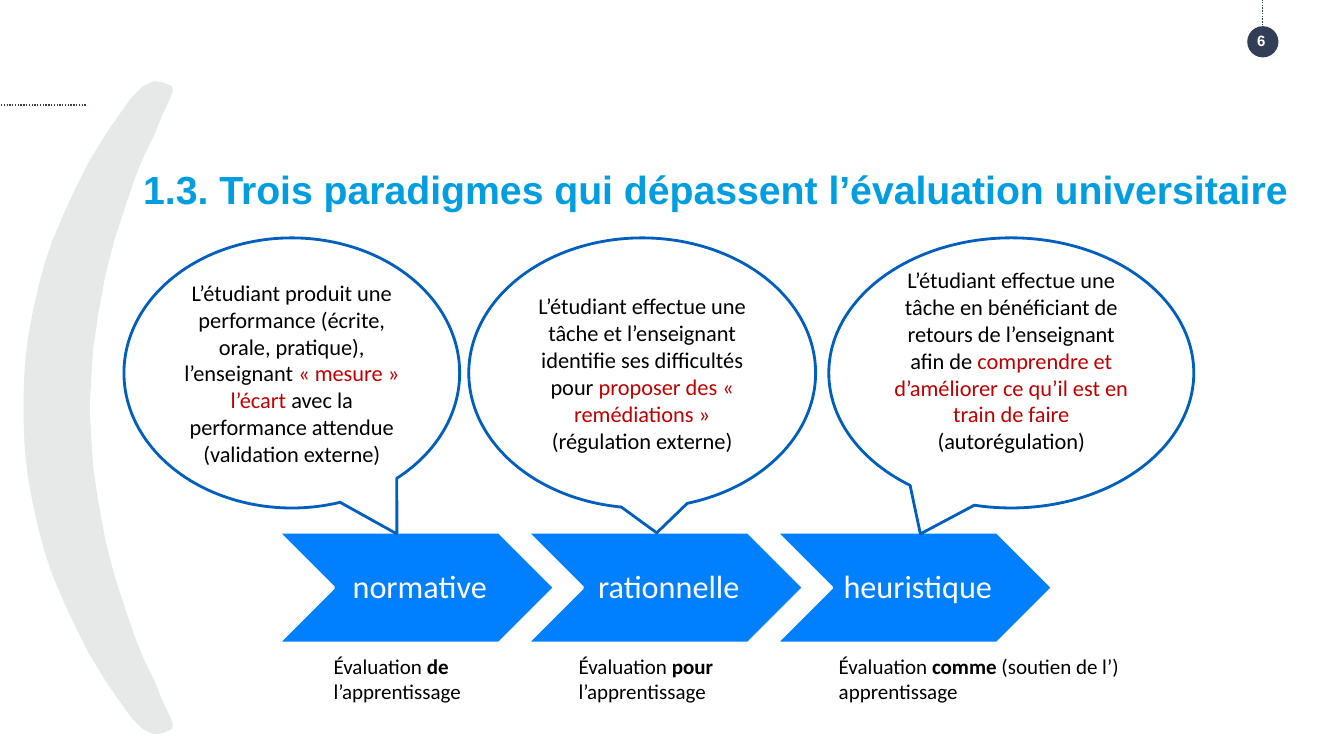
import pptx
import pptx.util
import pptx.dml.color
import pptx.enum.dml
import pptx.enum.shapes
import pptx.enum.text
import pptx.oxml.ns
import lxml.etree

Inches, Pt = pptx.util.Inches, pptx.util.Pt
SHAPE = pptx.enum.shapes.MSO_SHAPE
ALIGN = pptx.enum.text.PP_ALIGN
ANCHOR = pptx.enum.text.MSO_ANCHOR

COLORS = {
    "title": "009EE0", "navy": "313E56", "crescent": "E7E8E8", "arrow": "0080FF",
    "outline": "005FBD", "accent": "C00000", "text": "000000", "white": "FFFFFF",
}
TITLE = "1.3. Trois paradigmes qui dépassent l’évaluation universitaire"
PAGE = "6"
PARADIGMS = [
    {
        "name": "normative",
        "bubble": (1.23, 3.33), "tail": (0.313, 0.596), "bottom": 0.05,
        "speech": ("L’étudiant produit une performance (écrite, orale, pratique), l’enseignant ",
                   "« mesure » l’écart ", "avec la performance attendue (validation externe)"),
        "label": (3.21, 1.62), "role": ("Évaluation ", "de", " l’apprentissage"),
    },
    {
        "name": "rationnelle",
        "bubble": (4.65, 3.44), "tail": (0.042, 0.592), "bottom": 0.05,
        "speech": ("L’étudiant effectue une tâche et l’enseignant identifie ses difficultés pour ",
                   "proposer des « remédiations » ", "(régulation externe)"),
        "label": (5.64, 1.73), "role": ("Évaluation ", "pour", " l’apprentissage"),
    },
    {
        "name": "heuristique",
        "bubble": (8.22, 3.62), "tail": (-0.249, 0.596), "bottom": 0.3,
        "speech": ("L’étudiant effectue une tâche en bénéficiant de retours de l’enseignant afin de ",
                   "comprendre et d’améliorer ce qu’il est en train de faire ", "(autorégulation)"),
        "label": (8.22, 3.29), "role": ("Évaluation ", "comme", " (soutien de l’) apprentissage"),
    },
]
CRESCENT_MIDDLE = 4.045
CRESCENT_HALF = [
    (0.89, 3.93), (0.9, 3.75), (0.92, 3.45), (0.97, 3.11), (1.04, 2.73), (1.13, 2.38),
    (1.25, 2.01), (1.34, 1.75), (1.43, 1.53), (1.52, 1.35), (1.61, 1.13), (1.69, 0.96),
    (1.71, 0.9), (1.7, 0.86), (1.61, 0.82), (1.53, 0.81), (1.42, 0.86), (1.31, 0.97),
    (1.18, 1.15), (1.05, 1.34), (0.88, 1.62), (0.75, 1.88), (0.63, 2.14), (0.52, 2.4),
    (0.45, 2.61), (0.39, 2.83), (0.33, 3.1), (0.28, 3.37), (0.25, 3.65), (0.24, 3.9),
]
GUIDES = [((12.52, 0.28), (12.52, 0)), ((0.85, 1.04), (0, 1.04))]
ARROW_LEFT, ARROW_STEP, ARROW_TOP, ARROW_SIZE = 2.76, 2.47, 5.28, (2.74, 1.1)
BUBBLE_TOP, BUBBLE_HEIGHT = 2.36, 2.68
LABEL_TOP, LABEL_HEIGHT = 6.43, 0.61


def rgb(name):
    return pptx.dml.color.RGBColor.from_string(COLORS[name])


def paint(s, fill, line=None, width=1):
    s.shadow.inherit = False
    s.fill.solid()
    s.fill.fore_color.rgb = rgb(fill)
    if line:
        s.line.color.rgb = rgb(line)
        s.line.width = Pt(width)
    else:
        s.line.fill.background()
    return s


def add_preset(slide, kind, x, y, w, h):
    return slide.shapes.add_shape(kind, Inches(x), Inches(y), Inches(w), Inches(h))


def add_box(slide, x, y, w, h):
    return slide.shapes.add_textbox(Inches(x), Inches(y), Inches(w), Inches(h))


def set_insets(s, left, top, right, bottom):
    tf = s.text_frame
    tf.margin_left, tf.margin_top = Inches(left), Inches(top)
    tf.margin_right, tf.margin_bottom = Inches(right), Inches(bottom)


def write(s, texts, size, color="text", font="Calibri", bold=None,
          align=ALIGN.LEFT, anchor=ANCHOR.TOP):
    tf = s.text_frame
    tf.word_wrap = True
    tf.vertical_anchor = anchor
    p = tf.paragraphs[0]
    p.alignment = align
    p.font.size, p.font.name, p.font.bold = Pt(size), font, bold
    p.font.color.rgb = rgb(color)
    for text in texts:
        p.add_run().text = text
    return p


def add_crescent(slide):
    mirrored = [(x, 2 * CRESCENT_MIDDLE - y) for x, y in reversed(CRESCENT_HALF)]
    points = [(Inches(x), Inches(y)) for x, y in CRESCENT_HALF + mirrored]
    builder = slide.shapes.build_freeform(*points[0])
    builder.add_line_segments(points[1:], close=True)
    paint(builder.convert_to_shape(), "crescent", "crescent", 0.75)


def add_guide(slide, start, end):
    s = slide.shapes.add_connector(pptx.enum.shapes.MSO_CONNECTOR.STRAIGHT,
                                   *[Inches(v) for v in start + end])
    s.line.color.rgb = rgb("navy")
    s.line.width = Pt(1)
    s.line.dash_style = pptx.enum.dml.MSO_LINE.ROUND_DOT
    lxml.etree.SubElement(s._element.spPr, pptx.oxml.ns.qn("a:effectLst"))


def add_arrow(slide, index, name):
    s = add_preset(slide, SHAPE.CHEVRON, ARROW_LEFT + index * ARROW_STEP, ARROW_TOP, *ARROW_SIZE)
    paint(s, "arrow", "white", 2)
    set_insets(s, 0.1, 0.03, 0.03, 0.03)
    p = write(s, [name], 23, "white", align=ALIGN.CENTER, anchor=ANCHOR.MIDDLE)
    p.line_spacing = 0.9


def add_bubble(slide, paradigm):
    x, w = paradigm["bubble"]
    s = add_preset(slide, SHAPE.OVAL_CALLOUT, x, BUBBLE_TOP, w, BUBBLE_HEIGHT)
    s.adjustments[0], s.adjustments[1] = paradigm["tail"]
    paint(s, "white", "outline", 2)
    set_insets(s, 0.1, 0.05, 0.1, paradigm["bottom"])
    p = write(s, paradigm["speech"], 16, align=ALIGN.CENTER, anchor=ANCHOR.MIDDLE)
    p.runs[1].font.color.rgb = rgb("accent")


def add_label(slide, paradigm):
    x, w = paradigm["label"]
    p = write(add_box(slide, x, LABEL_TOP, w, LABEL_HEIGHT), paradigm["role"], 15)
    p.runs[1].font.bold = True


def main():
    """Build the slide on the three paradigms of assessment."""
    prs = pptx.Presentation()
    prs.slide_width, prs.slide_height = Inches(13.33), Inches(7.5)
    slide = prs.slides.add_slide(prs.slide_layouts[6])

    add_crescent(slide)
    paint(add_preset(slide, SHAPE.OVAL, 12.37, 0.26, 0.31, 0.31), "navy")
    for start, end in GUIDES:
        add_guide(slide, start, end)
    number = add_box(slide, 12.18, 0.33, 0.66, 0.15)
    write(number, [PAGE], 10.7, "white", "Arial", True, ALIGN.CENTER, ANCHOR.MIDDLE)
    title = add_box(slide, 1.42, 1.64, 11.43, 0.66)
    set_insets(title, 0, 0, 0, 0)
    write(title, [TITLE], 28, "title", "Arial", True)

    for index, paradigm in enumerate(PARADIGMS):
        add_arrow(slide, index, paradigm["name"])
    for paradigm in PARADIGMS:
        add_bubble(slide, paradigm)
        add_label(slide, paradigm)
    prs.save("out.pptx")


if __name__ == "__main__":
    main()
